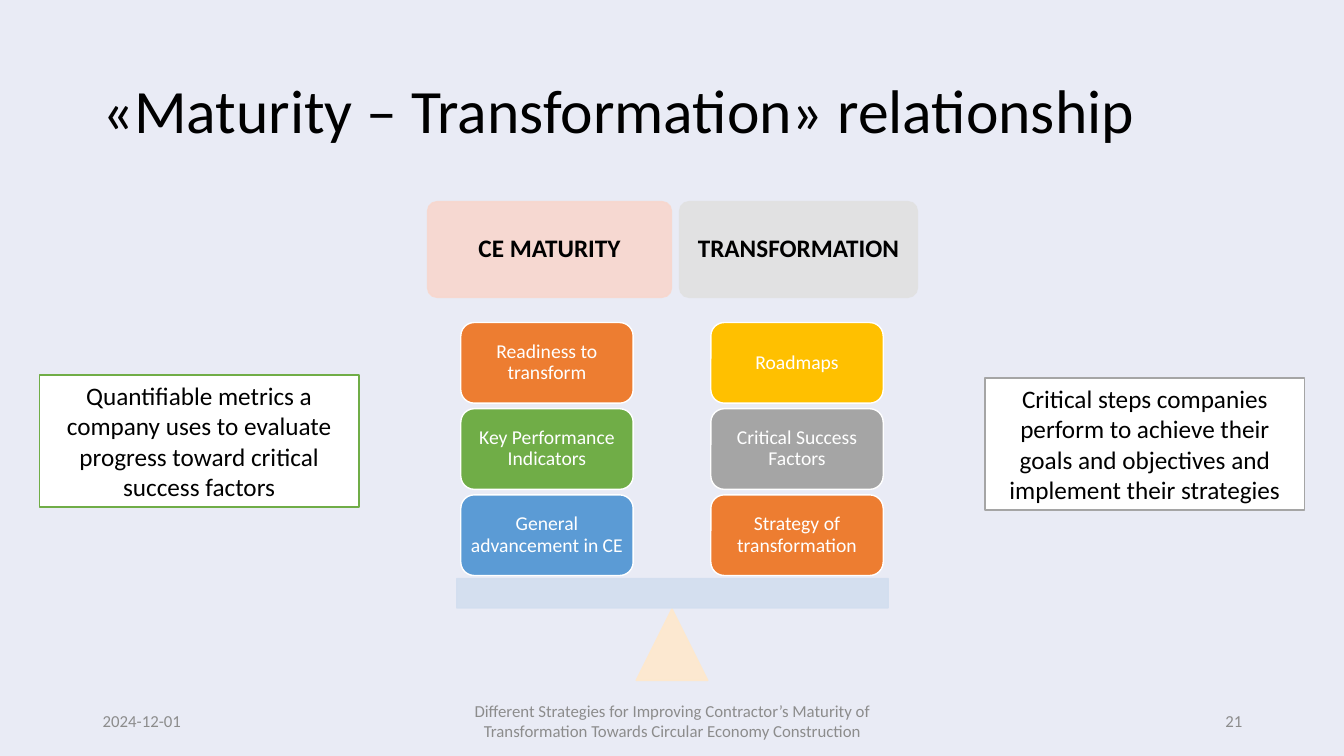
"""Build the slide on the maturity and transformation balance."""
from lxml import etree
from pptx import Presentation
from pptx.dml.color import RGBColor
from pptx.enum import shapes, text
from pptx.oxml import ns
from pptx.util import Inches, Pt

FONT = "Calibri"
BACK = RGBColor(0xE9, 0xEB, 0xF5)
BLACK = RGBColor(0, 0, 0)
WHITE = RGBColor(0xFF, 0xFF, 0xFF)
MUTED = RGBColor(0x8C, 0x8C, 0x8C)
ROSE = RGBColor(0xF8, 0xD7, 0xCE)
MIST = RGBColor(0xE1, 0xE1, 0xE1)
CREAM = RGBColor(0xFF, 0xE8, 0xCC)
PALE = RGBColor(0xD2, 0xDE, 0xEF)
ORANGE = RGBColor(0xED, 0x7D, 0x31)
GREY = RGBColor(0xA5, 0xA5, 0xA5)
GOLD = RGBColor(0xFF, 0xC0, 0x00)
BLUE = RGBColor(0x5B, 0x9B, 0xD5)
GREEN = RGBColor(0x70, 0xAD, 0x47)

KIND = shapes.MSO_SHAPE
LEFT, MID, RIGHT = text.PP_ALIGN.LEFT, text.PP_ALIGN.CENTER, text.PP_ALIGN.RIGHT

BLOCK_TOP, BLOCK_STEP = 3.2, 0.855
STACKS = (
    (4.57, (("Readiness to transform", ORANGE),
            ("Key Performance Indicators", GREEN),
            ("General advancement in CE", BLUE))),
    (7.05, (("Roadmaps", GOLD),
            ("Critical Success Factors", GREY),
            ("Strategy of transformation", ORANGE))),
)
HEADS = ((4.24, 2.42, "CE MATURITY", ROSE), (6.74, 2.36, "TRANSFORMATION", MIST))
NOTES = (
    (0.39, 3.72, GREEN, "Quantifiable metrics a company uses to evaluate "
                        "progress toward critical success factors"),
    (9.77, 3.75, GREY, "Critical steps companies perform to achieve their "
                       "goals and objectives and implement their strategies"),
)
FOOTERS = (
    (0.92, 3, LEFT, "2024-12-01"),
    (4.42, 4.5, MID, "Different Strategies for Improving Contractor’s Maturity "
                     "of Transformation Towards Circular Economy Construction"),
    (9.42, 3, RIGHT, "21"),
)


def write(shape, words, size, color, align=MID, bold=False, gap=1.0, inset=None):
    """Put one styled paragraph into a shape."""
    frame = shape.text_frame
    frame.word_wrap = True
    frame.vertical_anchor = text.MSO_ANCHOR.MIDDLE
    if inset is not None:
        frame.margin_left = frame.margin_right = Inches(inset)
        frame.margin_top = frame.margin_bottom = Inches(inset)
    para = frame.paragraphs[0]
    para.alignment = align
    para.line_spacing = gap
    run = para.add_run()
    run.text = words
    run.font.name = FONT
    run.font.size = Pt(size)
    run.font.bold = bold
    run.font.color.rgb = color


def fade(shape, share):
    """Set the opacity of fill and line in percent."""
    for color in shape.fill._xPr.iter(ns.qn("a:srgbClr")):
        etree.SubElement(color, ns.qn("a:alpha"), val=str(share * 1000))


def draw(slide, kind, box, fill, line):
    """Add a flat shape with a one point outline."""
    shape = slide.shapes.add_shape(kind, *map(Inches, box))
    shape.shadow.inherit = False
    shape.fill.solid()
    shape.fill.fore_color.rgb = fill
    shape.line.color.rgb = line
    shape.line.width = Pt(1)
    return shape


def tint(slide, kind, box, color):
    """Add a slightly see-through part of the balance."""
    shape = draw(slide, kind, box, color, color)
    fade(shape, 90)
    return shape


def label(slide, box, words, size, color, align, gap=1.0):
    """Add a plain text box."""
    shape = slide.shapes.add_textbox(*map(Inches, box))
    write(shape, words, size, color, align, gap=gap)


def scale(slide):
    """Draw the balance with its heads and stacked blocks."""
    for left, width, words, color in HEADS:
        head = tint(slide, KIND.ROUNDED_RECTANGLE, (left, 2, width, 0.95), color)
        head.adjustments[0] = 0.1
        write(head, words, 18, BLACK, bold=True, gap=0.9, inset=0.07)
    tint(slide, KIND.ISOSCELES_TRIANGLE, (6.31, 6.04, 0.71, 0.71), CREAM)
    tint(slide, KIND.RECTANGLE, (4.53, 5.74, 4.28, 0.29), PALE)
    for left, blocks in STACKS:
        for row, (words, color) in enumerate(blocks):
            box = (left, BLOCK_TOP + row * BLOCK_STEP, 1.71, 0.8)
            block = draw(slide, KIND.ROUNDED_RECTANGLE, box, color, WHITE)
            write(block, words, 14, WHITE, gap=0.9, inset=0.06)


def main():
    """Build and save the slide."""
    deck = Presentation()
    deck.slide_width, deck.slide_height = Inches(13.33), Inches(7.5)
    slide = deck.slides.add_slide(deck.slide_layouts[6])
    slide.background.fill.solid()
    slide.background.fill.fore_color.rgb = BACK
    label(slide, (0.92, 0.4, 11.5, 1.45),
          "«Maturity – Transformation» relationship", 44, BLACK, LEFT, 0.9)
    scale(slide)
    for left, width, align, words in FOOTERS:
        label(slide, (left, 6.95, width, 0.4), words, 12, MUTED, align)
    for left, top, color, words in NOTES:
        note = draw(slide, KIND.RECTANGLE, (left, top, 3.17, 1.31), WHITE, color)
        write(note, words, 18, BLACK)
        note.text_frame.auto_size = text.MSO_AUTO_SIZE.SHAPE_TO_FIT_TEXT
    deck.save("out.pptx")


if __name__ == "__main__":
    main()
